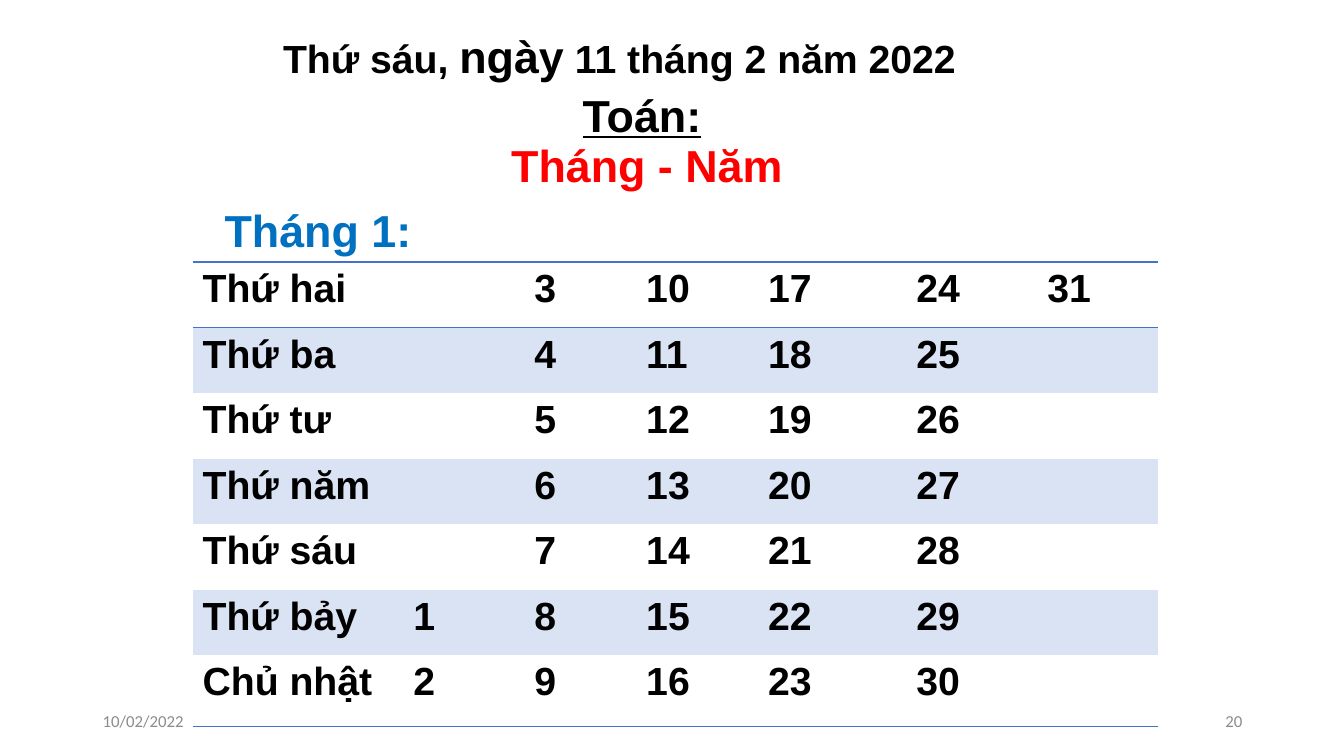
from lxml import etree
from pptx import Presentation
from pptx.dml.color import RGBColor
from pptx.enum.text import MSO_ANCHOR, PP_ALIGN
from pptx.oxml.ns import qn
from pptx.util import Inches, Pt

LEFT, RIGHT = PP_ALIGN.LEFT, PP_ALIGN.RIGHT
TOP, MIDDLE = MSO_ANCHOR.TOP, MSO_ANCHOR.MIDDLE
TITLE_ONLY = 5
NO_STYLE_NO_GRID = "{2D5ABB26-0587-4C30-8999-92F81FD0307C}"
COLORS = {
    "black": "000000",
    "red": "FF0000",
    "blue": "0070C0",
    "gray": "8C8C8C",
    "rule": "4472C4",
    "band": "DAE3F3",
}
WEEKDAYS = ["Thứ hai", "Thứ ba", "Thứ tư", "Thứ năm", "Thứ sáu", "Thứ bảy", "Chủ nhật"]
COLUMN_WIDTHS = [2.09, 1.2, 1.11, 1.21, 1.47, 1.3, 1.2]
ROW_HEIGHT, LAST_ROW_HEIGHT = 0.65, 0.71
FIRST_WEEKDAY, DAYS_IN_MONTH = 5, 31


def format_run(run, size, color="black", name="Arial", bold=True, underline=None):
    font = run.font
    font.size = Pt(size)
    font.name = name
    font.bold = bold
    font.underline = underline
    font.color.rgb = RGBColor.from_string(COLORS[color])


def fill_text(shape, pieces, align=LEFT, anchor=TOP, **style):
    frame = shape.text_frame
    frame.word_wrap = True
    frame.vertical_anchor = anchor
    paragraph = frame.paragraphs[0]
    paragraph.alignment = align
    for text, size in pieces:
        run = paragraph.add_run()
        run.text = text
        format_run(run, size, **style)


def add_label(slide, box, pieces, **style):
    shape = slide.shapes.add_textbox(*map(Inches, box))
    fill_text(shape, pieces, **style)


def place_title(slide, box, text):
    title = slide.shapes.title
    title.left, title.top, title.width, title.height = map(Inches, box)
    fill_text(title, [(text, 32)], color="red")
    paragraph = title.text_frame.paragraphs[0]
    paragraph.line_spacing = 1.0
    paragraph.space_before = Pt(0)


def add_heading(slide, left, top):
    date_pieces = [("Thứ sáu, ", 28), ("ngày", 32), (" 11 tháng 2 năm 2022", 28)]
    add_label(slide, (left, top, 8.26, 0.64), date_pieces)
    add_label(slide, (left + 2.97, top + 0.58, 2.72, 0.64), [("Toán:", 32)], underline=True)
    place_title(slide, (left + 2.26, top + 1.08, 3.74, 0.64), "Tháng - Năm")


def add_rule(cell, side):
    line = etree.Element(qn(f"a:{side}"), w=str(Pt(1)))
    fill = etree.SubElement(line, qn("a:solidFill"))
    etree.SubElement(fill, qn("a:srgbClr"), val=COLORS["rule"])
    properties = cell._tc.get_or_add_tcPr()
    properties.insert(len(properties.findall(qn("a:lnT"))), line)


def calendar_text(row, column):
    if column == 0:
        return WEEKDAYS[row]
    day = 7 * (column - 1) + row - FIRST_WEEKDAY + 1
    return str(day) if 1 <= day <= DAYS_IN_MONTH else ""


def format_cell(cell, row, column):
    if row % 2:
        cell.fill.solid()
        cell.fill.fore_color.rgb = RGBColor.from_string(COLORS["band"])
    else:
        cell.fill.background()
    if row == 0:
        add_rule(cell, "lnT")
    if row in (0, len(WEEKDAYS) - 1):
        add_rule(cell, "lnB")
    cell.text_frame.text = calendar_text(row, column)
    for run in cell.text_frame.paragraphs[0].runs:
        format_run(run, 28)


def add_calendar(slide, left, top):
    add_label(slide, (left + 0.22, top - 0.64, 3.93, 0.64), [("Tháng 1:", 32)], color="blue")
    row_heights = [ROW_HEIGHT] * (len(WEEKDAYS) - 1) + [LAST_ROW_HEIGHT]
    box = (left, top, sum(COLUMN_WIDTHS), sum(row_heights))
    frame = slide.shapes.add_table(len(row_heights), len(COLUMN_WIDTHS), *map(Inches, box))
    table = frame.table
    table.first_row = False
    table.horz_banding = False
    table._tbl.tblPr.find(qn("a:tableStyleId")).text = NO_STYLE_NO_GRID
    for column, width in enumerate(COLUMN_WIDTHS):
        table.columns[column].width = Inches(width)
    for row, height in enumerate(row_heights):
        table.rows[row].height = Inches(height)
        for column in range(len(COLUMN_WIDTHS)):
            format_cell(table.cell(row, column), row, column)


def add_footer(slide, left, top, width):
    box_width = 3
    for text, offset, align in [("10/02/2022", 0, LEFT), ("20", width - box_width, RIGHT)]:
        add_label(slide, (left + offset, top, box_width, 0.4), [(text, 12)], align=align,
                  anchor=MIDDLE, color="gray", name="Calibri", bold=False)


def main():
    presentation = Presentation()
    presentation.slide_width = Inches(13.33)
    presentation.slide_height = Inches(7.5)
    slide = presentation.slides.add_slide(presentation.slide_layouts[TITLE_ONLY])
    add_footer(slide, 0.92, 6.95, 11.5)
    add_heading(slide, 2.71, 0.24)
    add_calendar(slide, 1.91, 2.6)
    presentation.save("out.pptx")


if __name__ == "__main__":
    main()
